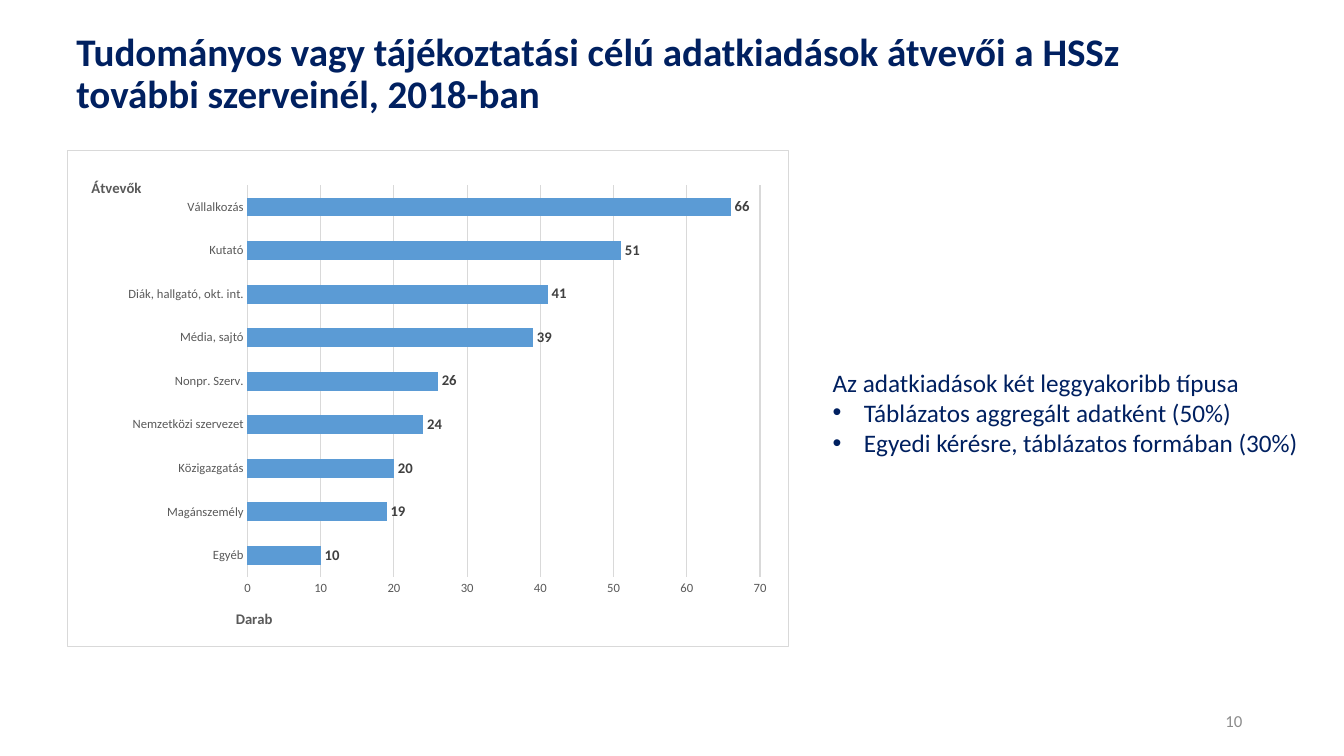
from lxml import etree
from pptx import Presentation
from pptx.chart.data import CategoryChartData
from pptx.dml.color import RGBColor
from pptx.enum.chart import XL_CHART_TYPE as ChartType, XL_LABEL_POSITION as LabelPosition, XL_TICK_MARK as TickMark
from pptx.enum.text import MSO_ANCHOR as Anchor, PP_ALIGN as Align
from pptx.oxml import parse_xml
from pptx.oxml.ns import nsdecls, qn
from pptx.util import Inches, Pt

NAVY, GREY, PALE, BLUE, DARK = "002060", "595959", "D9D9D9", "5B9BD5", "404040"
RECIPIENTS = {
    "Egyéb": 10, "Magánszemély": 19, "Közigazgatás": 20,
    "Nemzetközi szervezet": 24, "Nonpr. Szerv.": 26, "Média, sajtó": 39,
    "Diák, hallgató, okt. int.": 41, "Kutató": 51, "Vállalkozás": 66,
}


def paint(color_format, value):
    """Set a colour from a hex string."""
    color_format.rgb = RGBColor.from_string(value)


def apply(target, values):
    """Set every attribute named in a dict."""
    for name, value in values.items():
        setattr(target, name, value)


def style_font(font, size, color, bold=False):
    """Give a font its face, size, weight and colour."""
    apply(font, {"name": "Calibri", "size": Pt(size), "bold": bold})
    paint(font.color, color)


def style_line(line, color):
    """Draw a thin line in one colour."""
    line.width = Pt(0.75)
    paint(line.color, color)


def add_bullet(para):
    """Give a paragraph a hanging round bullet."""
    properties = para._p.get_or_add_pPr()
    properties.set("marL", str(Inches(0.31)))
    properties.set("indent", str(-Inches(0.31)))
    etree.SubElement(properties, qn("a:buFont")).set("typeface", "Arial")
    etree.SubElement(properties, qn("a:buChar")).set("char", "•")


def add_text(page, area, lines, size, color, bold=False, anchor=Anchor.TOP, bullets_from=None, **layout):
    """Add a wrapped text box with one paragraph per line."""
    frame = page.shapes.add_textbox(*map(Inches, area)).text_frame
    apply(frame, {"word_wrap": True, "vertical_anchor": anchor})
    for index, line in enumerate(lines):
        para = frame.add_paragraph() if index else frame.paragraphs[0]
        if bullets_from is not None and index >= bullets_from:
            add_bullet(para)
        apply(para, layout)
        span = para.add_run()
        span.text = line
        style_font(span.font, size, color, bold)


def place(parent, index, **measures):
    """Fix the place of a chart part by fractions of the chart."""
    for old in parent.findall(qn("c:layout")):
        parent.remove(old)
    layout = etree.Element(qn("c:layout"))
    manual = etree.SubElement(layout, qn("c:manualLayout"))
    if "w" in measures:
        etree.SubElement(manual, qn("c:layoutTarget")).set("val", "inner")
    for mode in ("xMode", "yMode"):
        etree.SubElement(manual, qn(f"c:{mode}")).set("val", "edge")
    for name, value in measures.items():
        etree.SubElement(manual, qn(f"c:{name}")).set("val", str(value))
    parent.insert(index, layout)


def style_axis(axis, title, x, y):
    """Style an axis and set its horizontal title at a fixed place."""
    apply(axis, {"major_tick_mark": TickMark.NONE, "minor_tick_mark": TickMark.NONE})
    style_font(axis.tick_labels.font, 9, GREY)
    frame = axis.axis_title.text_frame
    frame.text = title
    style_font(frame.paragraphs[0].runs[0].font, 10.5, GREY, True)
    body = frame._txBody.find(qn("a:bodyPr"))
    body.set("rot", "0")
    body.set("vert", "horz")
    place(axis.axis_title._element, 1, x=x, y=y)


def add_border(chart, color):
    """Frame the whole chart with a thin line."""
    chart._chartSpace.find(qn("c:chart")).addnext(parse_xml(
        f'<c:spPr {nsdecls("c", "a")}><a:noFill/><a:ln w="{Pt(0.75)}"><a:solidFill>'
        f'<a:srgbClr val="{color}"/></a:solidFill></a:ln></c:spPr>'))


def add_recipient_chart(page, area):
    """Add the bar chart of recipients."""
    data = CategoryChartData()
    data.categories = list(RECIPIENTS)
    data.add_series("Series 1", list(RECIPIENTS.values()))
    chart = page.shapes.add_chart(ChartType.BAR_CLUSTERED, *map(Inches, area), data).chart
    apply(chart, {"has_legend": False, "has_title": False})
    style_font(chart.font, 10, "000000")
    add_border(chart, PALE)

    plot = chart.plots[0]
    apply(plot, {"gap_width": 133, "vary_by_categories": False, "has_data_labels": True})
    apply(plot.data_labels, {"show_value": True, "position": LabelPosition.OUTSIDE_END})
    style_font(plot.data_labels.font, 10.5, DARK, True)
    fill = plot.series[0].format.fill
    fill.solid()
    paint(fill.fore_color, BLUE)

    style_axis(chart.category_axis, "Átvevők", 0.03, 0.05)
    style_axis(chart.value_axis, "Darab", 0.23, 0.92)
    style_line(chart.category_axis.format.line, PALE)
    chart.value_axis.format.line.fill.background()
    apply(chart.value_axis, {"minimum_scale": 0, "maximum_scale": 70, "major_unit": 10})
    style_line(chart.value_axis.major_gridlines.format.line, PALE)
    place(chart._chartSpace.find(".//" + qn("c:plotArea")), 0, x=0.25, y=0.07, w=0.71, h=0.79)


def main():
    """Build and save the slide."""
    deck = Presentation()
    apply(deck, {"slide_width": Inches(13.33), "slide_height": Inches(7.5)})
    page = deck.slides.add_slide(deck.slide_layouts[6])
    title = "Tudományos vagy tájékoztatási célú adatkiadások átvevői a HSSz további szerveinél, 2018-ban"
    add_text(page, (0.66, 0.24, 11.5, 1), [title], 27.9, NAVY, True, Anchor.MIDDLE, line_spacing=0.9)
    add_text(page, (9.42, 6.95, 3, 0.4), ["10"], 12, "8C8C8C", anchor=Anchor.MIDDLE, alignment=Align.RIGHT)
    add_recipient_chart(page, (0.66, 1.49, 7.17, 4.93))
    add_text(page, (8.16, 3.59, 4.95, 1), [
        "Az adatkiadások két leggyakoribb típusa",
        "Táblázatos aggregált adatként (50%)",
        "Egyedi kérésre, táblázatos formában (30%)",
    ], 18, NAVY, bullets_from=1)
    deck.save("out.pptx")


if __name__ == "__main__":
    main()
